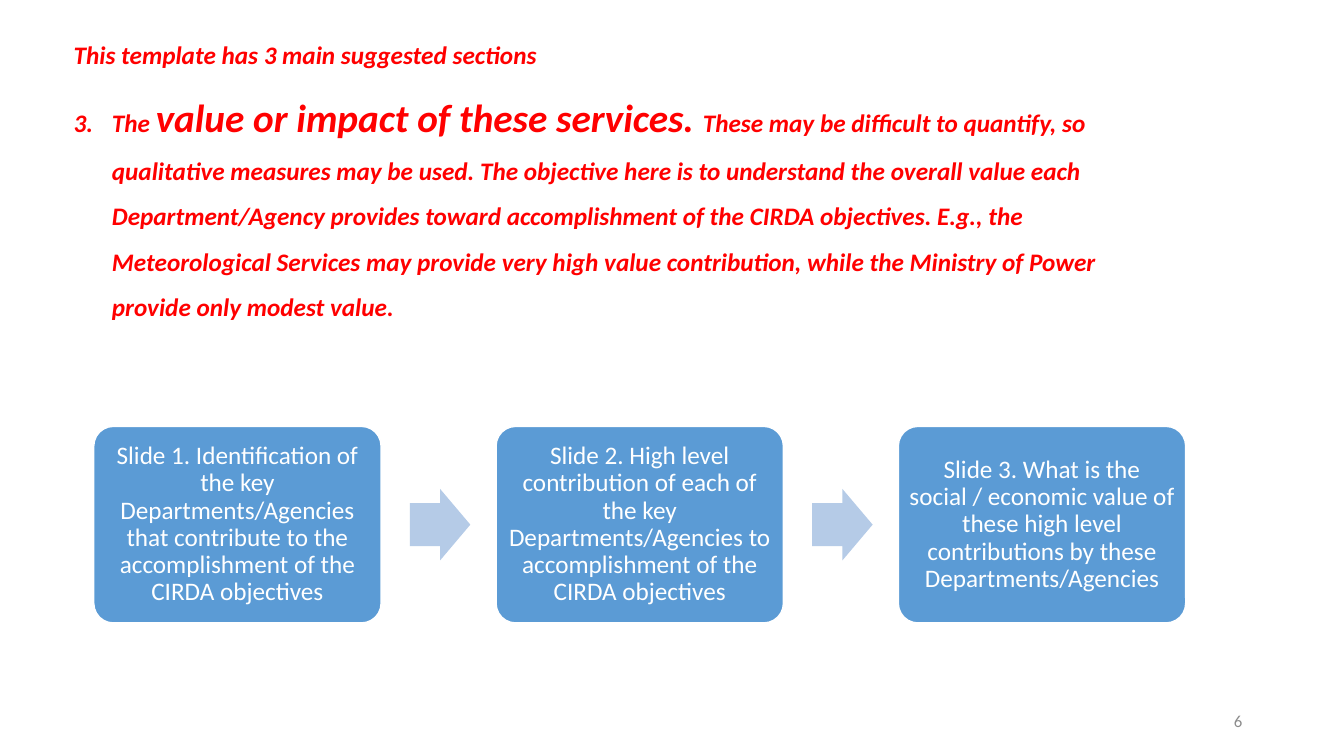
from lxml import etree
from pptx import Presentation
from pptx import util as u
from pptx.dml.color import RGBColor
from pptx.enum import shapes, text
from pptx.oxml.ns import qn

FONT = "Calibri"
HEADING = "This template has 3 main suggested sections"
SECTION_NUMBER = 3
SECTION = [
    ("The ", 18),
    ("value or impact of these services. ", 28),
    ("These may be difficult to quantify, so qualitative measures may be used. "
     "The objective here is to understand the overall value each Department/Agency "
     "provides toward accomplishment of the CIRDA objectives. E.g., the Meteorological "
     "Services may provide very high value contribution, while the Ministry of Power "
     "provide only modest value.", 18),
]
STEPS = [
    "Slide 1. Identification of the key Departments/Agencies that contribute to the "
    "accomplishment of the CIRDA objectives",
    "Slide 2. High level contribution of each of the key Departments/Agencies to "
    "accomplishment of the CIRDA objectives",
    "Slide 3. What is the social / economic value of these high level contributions "
    "by these Departments/Agencies",
]
PAGE = "6"

STEP_LEFT, STEP_TOP, STEP_W, STEP_H = 0.93, 4.23, 2.85, 1.95
PITCH = 1.4 * STEP_W
ARROW_W, ARROW_H = 0.6, 0.71
ARROW_OFFSET = 1.1 * STEP_W


def box(left, top, width, height):
    return [u.Inches(value) for value in (left, top, width, height)]


def color(value):
    return RGBColor.from_string(value)


def style(paragraph, size, ink, bold=False, italic=False):
    font = paragraph.font
    font.name, font.size, font.bold, font.italic = FONT, u.Pt(size), bold, italic
    font.color.rgb = color(ink)


def set_bullet(paragraph, indent, tag, **attributes):
    properties = paragraph._p.get_or_add_pPr()
    properties.set("marL", str(u.Inches(indent)))
    properties.set("indent", str(-u.Inches(indent)))
    etree.SubElement(properties, qn(tag), attributes)


def add_block(slide, kind, place, fill, adjustments):
    block = slide.shapes.add_shape(kind, *box(*place))
    block.shadow.inherit = False
    block.fill.solid()
    block.fill.fore_color.rgb = color(fill)
    block.line.fill.background()
    for index, value in enumerate(adjustments):
        block.adjustments[index] = value
    return block


def add_intro(slide):
    intro = slide.placeholders[1]
    intro.left, intro.top, intro.width, intro.height = box(0.63, 0.19, 10.71, 3.38)
    frame = intro.text_frame
    frame.word_wrap = True
    frame.auto_size = text.MSO_AUTO_SIZE.SHAPE_TO_FIT_TEXT
    frame.vertical_anchor = text.MSO_ANCHOR.TOP
    heading, section = frame.paragraphs[0], frame.add_paragraph()
    heading.text = HEADING
    set_bullet(heading, 0, "a:buNone")
    set_bullet(section, 0.38, "a:buFont", typeface="+mj-lt")
    set_bullet(section, 0.38, "a:buAutoNum", type="arabicPeriod", startAt=str(SECTION_NUMBER))
    for paragraph in (heading, section):
        paragraph.line_spacing = 1.5
        paragraph.space_before = u.Pt(0)
        style(paragraph, 18, "FF0000", bold=True, italic=True)
    for words, size in SECTION:
        run = section.add_run()
        run.text = words
        run.font.size = u.Pt(size)


def add_steps(slide):
    for index, words in enumerate(STEPS):
        left = STEP_LEFT + index * PITCH
        step = add_block(slide, shapes.MSO_SHAPE.ROUNDED_RECTANGLE,
                         (left, STEP_TOP, STEP_W, STEP_H), "5B9BD5", [0.1])
        step.line.color.rgb = color("FFFFFF")
        step.line.width = u.Pt(1)
        frame = step.text_frame
        frame.word_wrap = True
        frame.vertical_anchor = text.MSO_ANCHOR.MIDDLE
        frame.margin_left = frame.margin_right = u.Inches(0.01)
        frame.margin_top = frame.margin_bottom = u.Inches(0.01)
        paragraph = frame.paragraphs[0]
        paragraph.text = words
        paragraph.alignment = text.PP_ALIGN.CENTER
        paragraph.line_spacing = 0.9
        style(paragraph, 18, "FFFFFF")
        if index < len(STEPS) - 1:
            arrow_top = STEP_TOP + (STEP_H - ARROW_H) / 2
            add_block(slide, shapes.MSO_SHAPE.RIGHT_ARROW,
                      (left + ARROW_OFFSET, arrow_top, ARROW_W, ARROW_H), "B5CBE7", [0.6, 0.5])


def add_page_number(slide):
    frame = slide.shapes.add_textbox(*box(9.42, 6.95, 3, 0.4)).text_frame
    frame.word_wrap = True
    frame.vertical_anchor = text.MSO_ANCHOR.MIDDLE
    paragraph = frame.paragraphs[0]
    paragraph.text = PAGE
    paragraph.alignment = text.PP_ALIGN.RIGHT
    style(paragraph, 12, "8C8C8C")


def main():
    deck = Presentation()
    deck.slide_width, deck.slide_height = u.Inches(13.33), u.Inches(7.5)
    slide = deck.slides.add_slide(deck.slide_layouts[1])
    title = slide.shapes.title.element
    title.getparent().remove(title)
    add_steps(slide)
    add_page_number(slide)
    add_intro(slide)
    deck.save("out.pptx")


if __name__ == "__main__":
    main()
